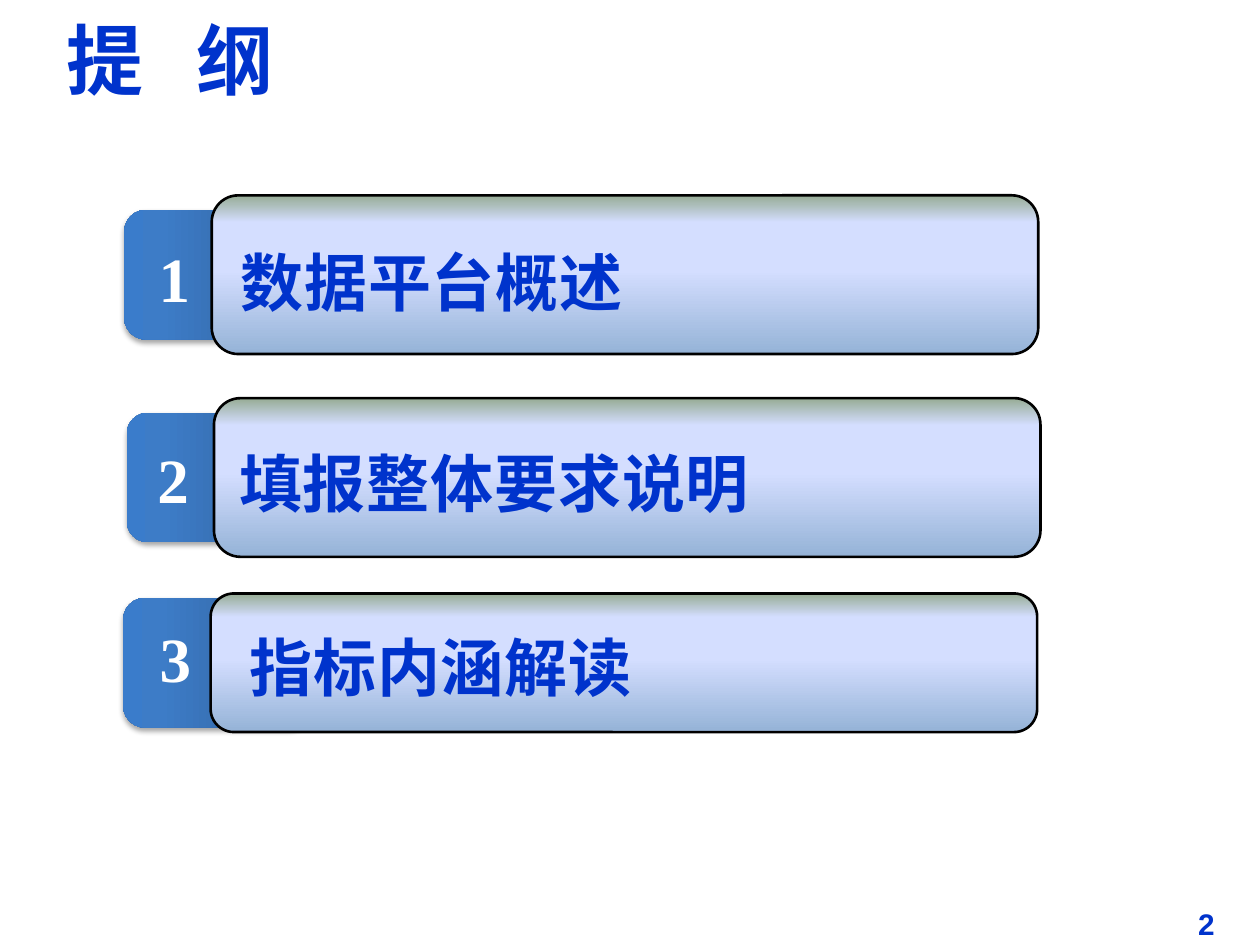
from lxml.etree import SubElement
from pptx import Presentation
from pptx.dml.color import RGBColor
from pptx.enum.shapes import MSO_SHAPE as Preset
from pptx.enum.text import MSO_ANCHOR as Anchor, MSO_AUTO_SIZE as AutoSize, PP_ALIGN as Align
from pptx.oxml.ns import qn
from pptx.util import Pt

COLORS = {
    "blue": "0033CC", "white": "FFFFFF", "black": "000000",
    "tab_dark": "2F5F99", "tab_mid": "3D7CC7", "tab_light": "3A7CCB",
    "panel_blue": "95B3D7", "panel_pale": "D4DEFF", "panel_green": "96AB94",
}
TAB_STOPS = [(0, "tab_dark"), (80, "tab_mid"), (100, "tab_light")]
PANEL_STOPS = [(0, "panel_blue"), (53, "panel_pale"), (83, "panel_pale"), (100, "panel_green")]
TITLE = {"name": "Times New Roman", "size": Pt(44), "bold": True}
ITEM = {"name": "Times New Roman", "size": Pt(36), "bold": True}
PAGE = {"name": "Arial", "size": Pt(17), "bold": True}
ITEMS = [
    {"box": (71, 111.6, 522.3, 90.7), "number": (12.5, 21.6),
     "label": (59.3, 23.8, 486.7), "text": "数据平台概述"},
    {"box": (72.3, 227.5, 522.3, 90.7), "number": (10.5, 20.9),
     "label": (57.3, 23.1, 484.6), "text": "填报整体要求说明"},
    {"box": (70.4, 339.1, 522.3, 79.2), "number": (13.8, 11.5),
     "label": (65, 16.6, 445.7), "text": "指标内涵解读"},
]


def add_run(paragraph, text, font_format, color, spacing=0):
    """Append a formatted run; spacing is the tracking in points."""
    run = paragraph.add_run()
    run.text = text
    for name, value in font_format.items():
        setattr(run.font, name, value)
    run.font.color.rgb = RGBColor.from_string(COLORS[color])
    run._r.get_or_add_rPr().set("spc", str(int(spacing * 100)))


def prepare_frame(shape):
    """Set up a wrapping, top-left text frame and return its paragraph."""
    frame = shape.text_frame
    settings = {"word_wrap": True, "vertical_anchor": Anchor.TOP,
                "auto_size": AutoSize.SHAPE_TO_FIT_TEXT}
    for name, value in settings.items():
        setattr(frame, name, value)
    paragraph = frame.paragraphs[0]
    paragraph.alignment = Align.LEFT
    return paragraph


def add_text(shapes, box, text, font_format, color, spacing=0):
    """Add a text box holding one line."""
    shape = shapes.add_textbox(*map(Pt, box))
    add_run(prepare_frame(shape), text, font_format, color, spacing)


def add_upright_bar(shapes, box, stops, angle):
    """Add a rounded bar turned by 270 degrees so that it fills the box."""
    left, top, width, height = box
    shift = (width - height) / 2
    shape = shapes.add_shape(Preset.ROUNDED_RECTANGLE, Pt(left + shift), Pt(top - shift),
                             Pt(height), Pt(width))
    shape.rotation = 270
    shape.adjustments[0] = 0.167
    shape.shadow.inherit = False
    shape.fill.gradient()
    shape.fill.gradient_angle = angle
    stop_list = shape._element.spPr.find(".//" + qn("a:gsLst"))
    for stop in list(stop_list):
        stop_list.remove(stop)
    for position, color in stops:
        stop = SubElement(stop_list, qn("a:gs"), pos=str(position * 1000))
        SubElement(stop, qn("a:srgbClr"), val=COLORS[color])
    return shape


def add_shadow(shape):
    """Give a shape a soft shadow below it."""
    effects = shape._element.spPr.find(qn("a:effectLst"))
    shadow = SubElement(effects, qn("a:outerShdw"), blurRad=str(Pt(3.1)), dist=str(Pt(1.8)),
                        dir="5400000", rotWithShape="0")
    color = SubElement(shadow, qn("a:srgbClr"), val=COLORS["black"])
    SubElement(color, qn("a:alpha"), val="35000")


def add_item(slide, number, item):
    """Add one outline entry: numbered tab, panel and label in a group."""
    left, top, width, height = item["box"]
    tab_width, tab_height, panel_offset = 106.6, 74.2, 50
    shapes = slide.shapes.add_group_shape().shapes
    tab_top = top + (height - tab_height) / 2
    tab = add_upright_bar(shapes, (left, tab_top, tab_width, tab_height), TAB_STOPS, 90)
    tab.line.fill.background()
    add_shadow(tab)
    panel_box = (left + panel_offset, top, width - panel_offset, height)
    panel = add_upright_bar(shapes, panel_box, PANEL_STOPS, 0)
    panel.line.color.rgb = RGBColor.from_string(COLORS["black"])
    panel.line.width = Pt(1.5)
    x, y = item["number"]
    add_text(shapes, (left + x, top + y, 29.5, 51), str(number), ITEM, "white")
    x, y, label_width = item["label"]
    add_text(shapes, (left + x, top + y, label_width, 51), item["text"], ITEM, "blue", 0.5)


def add_title(slide, box):
    """Fill the title placeholder, with a wide gap between its two characters."""
    title = slide.shapes.title
    for name, value in zip(("left", "top", "width", "height"), box):
        setattr(title, name, Pt(value))
    paragraph = prepare_frame(title)
    for text, spacing in (("提", 3), (" ", 17), ("纲", 3)):
        add_run(paragraph, text, TITLE, "blue", spacing)


def main():
    """Build the outline slide and save it."""
    presentation = Presentation()
    presentation.slide_width, presentation.slide_height = Pt(720), Pt(540)
    slide = presentation.slides.add_slide(presentation.slide_layouts[5])
    add_title(slide, (31, 3.6, 249.8, 60.5))
    for number, item in enumerate(ITEMS, 1):
        add_item(slide, number, item)
    add_text(slide.shapes, (677.5, 514, 42.5, 28), "2", PAGE, "blue", 0.5)
    presentation.save("out.pptx")


if __name__ == "__main__":
    main()
